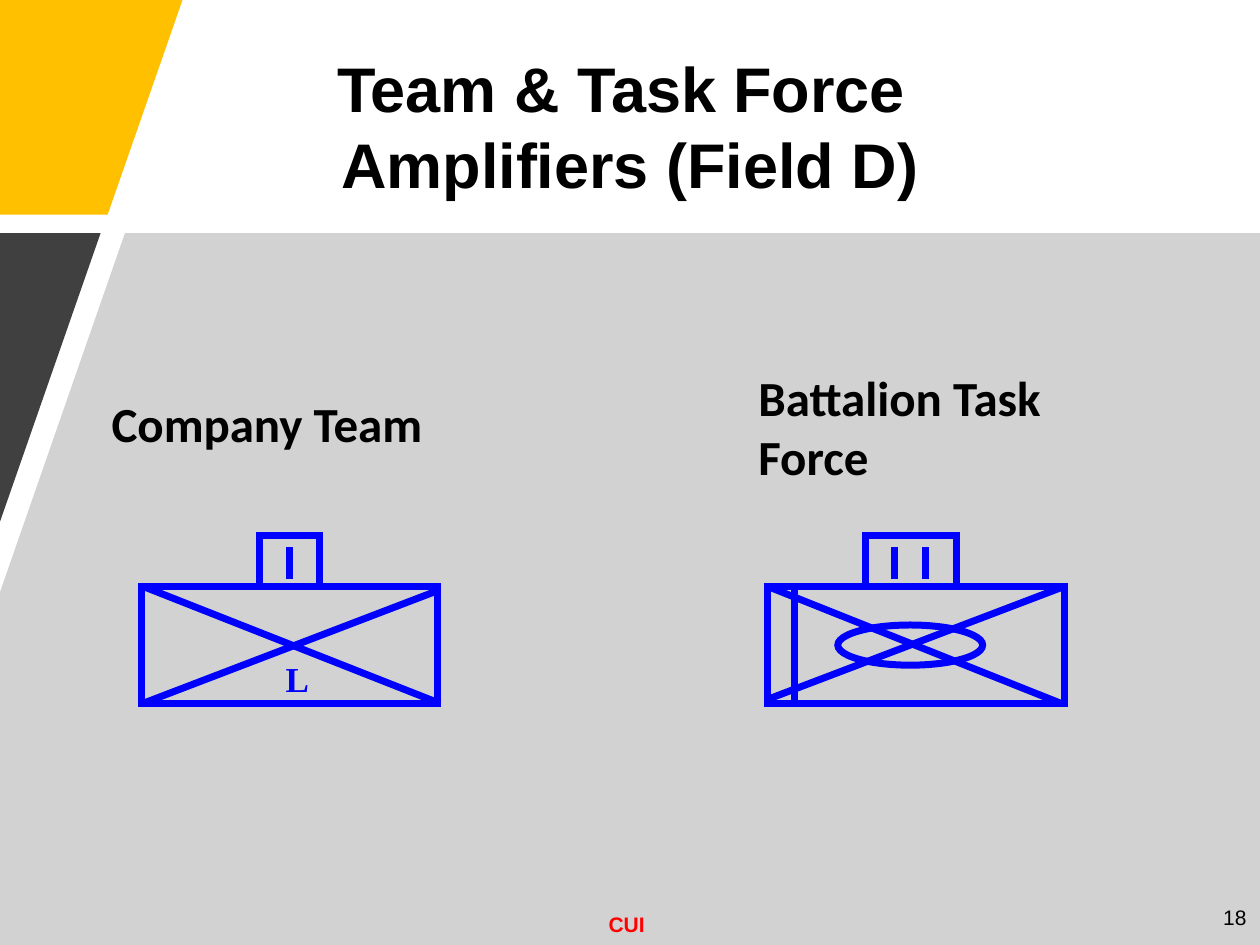
from dataclasses import dataclass

from lxml import etree
from pptx import Presentation
from pptx.dml.color import RGBColor
from pptx.enum.shapes import MSO_CONNECTOR, MSO_SHAPE
from pptx.enum.text import MSO_ANCHOR, MSO_AUTO_SIZE, PP_ALIGN
from pptx.oxml.ns import qn
from pptx.util import Cm, Pt

STRAIGHT = MSO_CONNECTOR.STRAIGHT
RECTANGLE, OVAL = MSO_SHAPE.RECTANGLE, MSO_SHAPE.OVAL
LEFT, CENTER, RIGHT = PP_ALIGN.LEFT, PP_ALIGN.CENTER, PP_ALIGN.RIGHT
TOP, MIDDLE = MSO_ANCHOR.TOP, MSO_ANCHOR.MIDDLE
GROW = MSO_AUTO_SIZE.SHAPE_TO_FIT_TEXT


@dataclass(frozen=True)
class Theme:
    gold: RGBColor = RGBColor(0xFF, 0xC0, 0x00)
    panel: RGBColor = RGBColor(0xD2, 0xD2, 0xD2)
    dark: RGBColor = RGBColor(0x40, 0x40, 0x40)
    black: RGBColor = RGBColor(0, 0, 0)
    red: RGBColor = RGBColor(0xFF, 0, 0)
    blue: RGBColor = RGBColor(0, 0, 0xFF)
    title: Pt = Pt(36)
    label: Pt = Pt(28)
    letter: Pt = Pt(20)
    footer: Pt = Pt(12)
    stroke: Pt = Pt(4)


theme = Theme()


def add_text(shapes, box, lines, font, size, color, bold=True,
             align=LEFT, anchor=TOP, wrap=False):
    text_box = shapes.add_textbox(*map(Cm, box))
    frame = text_box.text_frame
    frame.word_wrap = wrap
    frame.vertical_anchor = anchor
    if anchor == TOP:
        frame.auto_size = GROW
    frame.text = "\n".join(lines)
    for paragraph in frame.paragraphs:
        paragraph.alignment = align
        paragraph.font.name = font
        paragraph.font.size = size
        paragraph.font.bold = bold
        paragraph.font.color.rgb = color


def add_stroke(shapes, *ends):
    connector = shapes.add_connector(STRAIGHT, *map(Cm, ends))
    connector.line.color.rgb = theme.blue
    connector.line.width = theme.stroke
    etree.SubElement(connector._element.spPr, qn("a:effectLst"))


presentation = Presentation()
presentation.slide_width = Cm(25.4)
presentation.slide_height = Cm(19.05)
slide = presentation.slides.add_slide(presentation.slide_layouts[6])

# Slanted background panels
panels = [
    (theme.gold, [(0, 0), (3.68, 0), (2.17, 4.33), (0, 4.33)]),
    (theme.panel,
     [(2.52, 4.7), (25.4, 4.7), (25.4, 19.05), (0, 19.05), (0, 11.94)]),
    (theme.dark, [(0, 4.7), (2.03, 4.7), (0, 10.52)]),
]
for color, points in panels:
    start, *rest = [(Cm(x), Cm(y)) for x, y in points]
    builder = slide.shapes.build_freeform(*start)
    builder.add_line_segments(rest, close=True)
    panel = builder.convert_to_shape()
    panel.shadow.inherit = False
    panel.fill.solid()
    panel.fill.fore_color.rgb = color
    panel.line.fill.background()

# Text
add_text(slide.shapes, (0, 0.88, 25.4, 3.33),
         ["Team & Task Force ", "Amplifiers (Field D)"],
         "Arial", theme.title, theme.black, align=CENTER, wrap=True)
add_text(slide.shapes, (2, 7.8, 7.87, 1.42), ["Company Team"],
         "Calibri", theme.label, theme.black)
add_text(slide.shapes, (15.04, 7.29, 7.26, 2.62), ["Battalion Task", "Force"],
         "Calibri", theme.label, theme.black)
add_text(slide.shapes, (12.02, 18.25, 1.24, 0.76), ["CUI"],
         "Arial", theme.footer, theme.red)
add_text(slide.shapes, (19.68, 17.98, 5.7, 1.02), ["18"],
         "Arial", theme.footer, theme.black, bold=False,
         align=RIGHT, anchor=MIDDLE, wrap=True)

# Unit symbols: crossed frame, echelon ticks and the bracket above them
frame_top, frame_height = 11.82, 2.36
frame_bottom = frame_top + frame_height
symbols = [
    (2.85, 5.98, (5.23, 6.45), [5.84], [],
     [(2.88, 11.82, 8.87, 14.18), (8.84, 11.9, 2.88, 14.18)]),
    (15.47, 5.99, (17.44, 19.28), [18.04, 18.66],
     [(OVAL, 16.89, 12.6, 2.92, 0.81)],
     [(15.47, 11.82, 21.39, 14.18), (21.46, 11.82, 15.47, 14.1)]),
]
groups = []
for left, width, posts, ticks, ovals, diagonals in symbols:
    group = slide.shapes.add_group_shape()
    groups.append(group)
    frame = (RECTANGLE, left, frame_top, width, frame_height)
    for kind, *box in [frame] + ovals:
        shape = group.shapes.add_shape(kind, *map(Cm, box))
        shape.shadow.inherit = False
        shape.fill.background()
        shape.line.color.rgb = theme.blue
        shape.line.width = theme.stroke
        etree.SubElement(shape.line._get_or_add_ln(), qn("a:miter"), lim="800000")
    for ends in diagonals:
        add_stroke(group.shapes, *ends)
    for x in ticks:
        add_stroke(group.shapes, x, 11.03, x, 11.68)
    for x in posts:
        add_stroke(group.shapes, x, frame_top, x, 10.73)
    add_stroke(group.shapes, posts[0] + 0.07, 10.8, posts[1] - 0.07, 10.8)

company_team, battalion_task_force = groups
add_text(company_team.shapes, (5.51, 13.13, 0.97, 1.09), ["L"],
         "Times New Roman", theme.letter, theme.blue)
add_stroke(battalion_task_force.shapes, 16.01, frame_top, 16.01, frame_bottom)

presentation.save("out.pptx")
